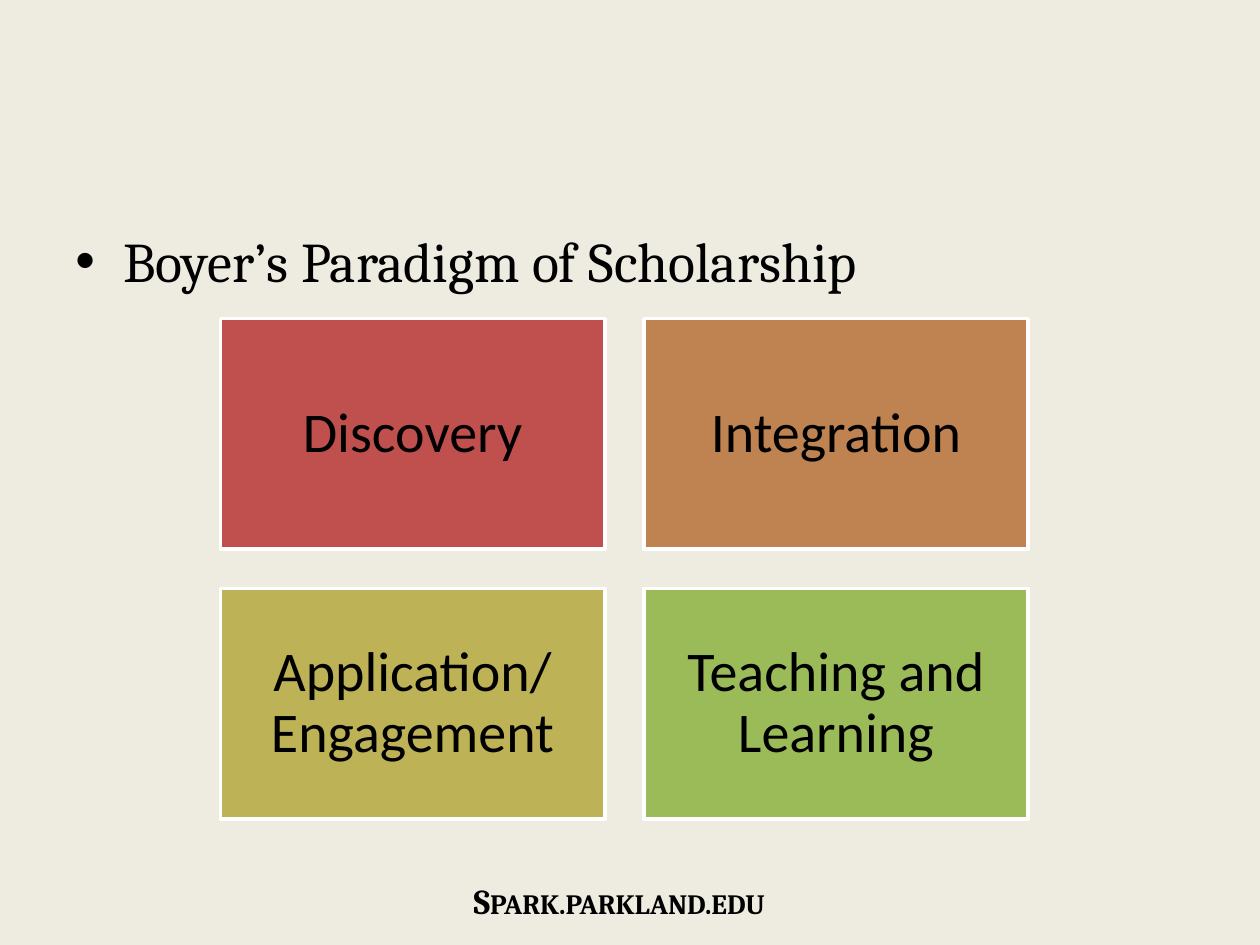
"""Build a slide showing the four areas of Boyer's scholarship model."""
from dataclasses import dataclass

from lxml import etree
from pptx import Presentation
from pptx.dml.color import RGBColor
from pptx.enum.shapes import MSO_SHAPE
from pptx.enum.text import MSO_ANCHOR, PP_ALIGN
from pptx.oxml.ns import qn
from pptx.util import Inches, Pt

RECTANGLE = MSO_SHAPE.RECTANGLE
TOP, MIDDLE = MSO_ANCHOR.TOP, MSO_ANCHOR.MIDDLE
LEFT, CENTER = PP_ALIGN.LEFT, PP_ALIGN.CENTER


@dataclass(frozen=True)
class Theme:
    """Colours, fonts and type sizes."""
    background: str = "EEECE1"
    text: str = "000000"
    outline: str = "FFFFFF"
    serif: str = "Cambria"
    sans: str = "Calibri"
    body_size: int = 32
    footer_size: int = 20
    outline_width: int = 2


def set_attributes(target, values):
    """Set each named attribute on the target."""
    for name, value in values.items():
        setattr(target, name, value)


class SlideBuilder:
    """Hold the theme and slide, and add styled elements."""

    def __init__(self, slide, theme):
        """Keep the slide and theme, and paint the background."""
        self.slide = slide
        self.theme = theme
        self.fill(slide.background, theme.background)

    def fill(self, target, color):
        """Give the target a solid fill."""
        target.fill.solid()
        target.fill.fore_color.rgb = RGBColor.from_string(color)

    def label(self, shape, text, font, frame, paragraph_format):
        """Put one styled paragraph into a shape."""
        text_frame = shape.text_frame
        set_attributes(text_frame, {"word_wrap": True, **frame})
        paragraph = text_frame.paragraphs[0]
        set_attributes(paragraph, paragraph_format)
        run = paragraph.add_run()
        run.text = text
        set_attributes(run.font, font)
        run.font.color.rgb = RGBColor.from_string(self.theme.text)
        return paragraph

    def text_box(self, box, text, font, anchor, alignment):
        """Add a text box in the serif face."""
        shape = self.slide.shapes.add_textbox(*map(Inches, box))
        return self.label(shape, text, {"name": self.theme.serif, **font},
                          {"vertical_anchor": anchor}, {"alignment": alignment})

    def bullet(self, box, text):
        """Add a bulleted line with a hanging indent."""
        paragraph = self.text_box(box, text, {"size": Pt(self.theme.body_size)}, TOP, LEFT)
        properties = paragraph._p.get_or_add_pPr()
        properties.set("marL", str(Inches(0.38)))
        properties.set("indent", str(Inches(-0.38)))
        etree.SubElement(properties, qn("a:buFont"), typeface="Arial")
        etree.SubElement(properties, qn("a:buChar"), char="•")

    def footer(self, box, text):
        """Add a bold centred line in small capitals."""
        font = {"size": Pt(self.theme.footer_size), "bold": True}
        paragraph = self.text_box(box, text, font, MIDDLE, CENTER)
        paragraph.runs[0]._r.get_or_add_rPr().set("cap", "small")

    def tile(self, box, text, color):
        """Add an outlined rectangle with a centred label."""
        shape = self.slide.shapes.add_shape(RECTANGLE, *map(Inches, box))
        shape.shadow.inherit = False
        self.fill(shape, color)
        shape.line.color.rgb = RGBColor.from_string(self.theme.outline)
        shape.line.width = Pt(self.theme.outline_width)
        sides = ("left", "top", "right", "bottom")
        frame = {f"margin_{side}": Inches(0.13) for side in sides}
        self.label(shape, text,
                   {"name": self.theme.sans, "size": Pt(self.theme.body_size)},
                   {"vertical_anchor": MIDDLE, **frame},
                   {"alignment": CENTER, "line_spacing": 0.9})


def main():
    """Create and save the presentation."""
    presentation = Presentation()
    set_attributes(presentation, {"slide_width": Inches(10), "slide_height": Inches(7.5)})
    slide = presentation.slides.add_slide(presentation.slide_layouts[6])
    builder = SlideBuilder(slide, Theme())

    builder.bullet((0.5, 1.75, 9, 4.95), "Boyer’s Paradigm of Scholarship")
    builder.footer((3.08, 6.95, 3.67, 0.4), "Spark.parkland.edu")

    areas = [
        ("Discovery", "C0504D"),
        ("Integration", "BE8351"),
        ("Application/ Engagement", "BDB255"),
        ("Teaching and Learning", "9BBB59"),
    ]
    left, top, width, height, gap = 1.75, 2.53, 3.05, 1.83, 0.31
    for index, (name, color) in enumerate(areas):
        row, column = divmod(index, 2)
        box = (left + column * (width + gap), top + row * (height + gap), width, height)
        builder.tile(box, name, color)

    presentation.save("out.pptx")


if __name__ == "__main__":
    main()
